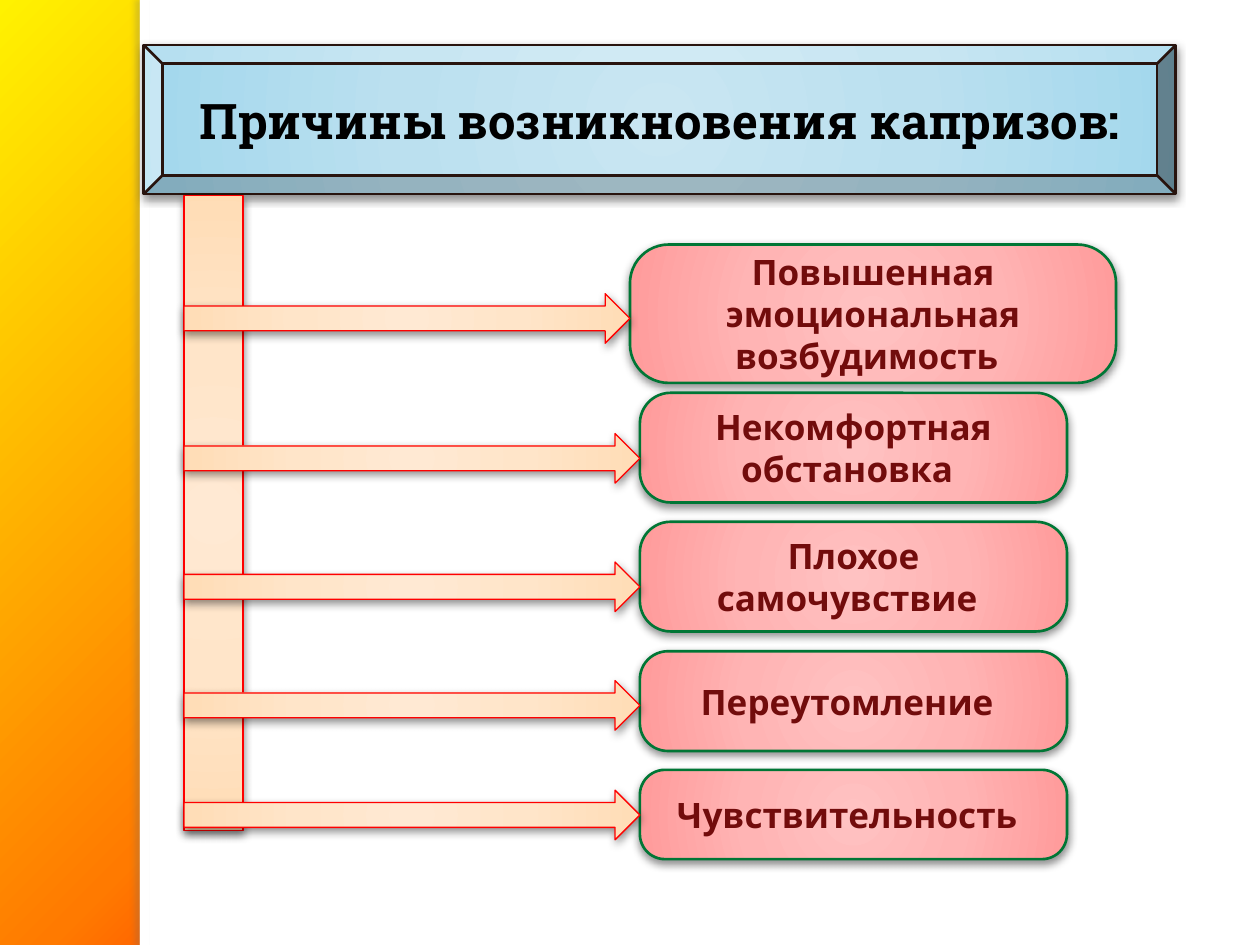
from dataclasses import dataclass

from lxml.etree import SubElement
from pptx import Presentation
from pptx.dml.color import RGBColor
from pptx.enum.shapes import MSO_SHAPE
from pptx.enum.text import MSO_ANCHOR, PP_ALIGN
from pptx.oxml.ns import qn
from pptx.util import Cm, Pt

COLORS = {
    "panel": "FFFFFF",
    "edge_shadow": "736F63",
    "shadow": "000000",
    "banner_line": "28140E",
    "banner_text": "000000",
    "cause_line": "007635",
    "cause_text": "720C0C",
    "arrow_line": "FF0000",
}
GRADIENTS = {
    "background": [(0, "FFF200", 100), (45, "FF7A00", 100), (70, "FF0300", 56), (100, "4D0808", 75)],
    "banner": [(0, "C9E6F2", 100), (50, "BBE0EF", 100), (97, "A4D8ED", 100), (100, "9BD7EE", 100)],
    "cause": [(0, "FFC2C2", 100), (50, "FFB4B4", 100), (97, "FF9C9C", 100), (100, "FF9595", 100)],
    "arrow": [(0, "FFE9D3", 100), (50, "FFE5C9", 100), (97, "FFDDB7", 100), (100, "FFDBB2", 100)],
}
STEM_LEFT = 3.71
ARROW_HEIGHT = 1


@dataclass(frozen=True)
class Frame:
    left: float
    top: float
    width: float
    height: float

    def lengths(self) -> tuple:
        return Cm(self.left), Cm(self.top), Cm(self.width), Cm(self.height)


@dataclass(frozen=True)
class Style:
    gradient: str
    line: str
    line_width: float


@dataclass(frozen=True)
class Cause:
    text: str
    top: float
    height: float
    arrow_top: float
    left: float = 12.9
    width: float = 8.61


BANNER = Style("banner", "banner_line", 1.5)
CAUSE = Style("cause", "cause_line", 1.5)
ARROW = Style("arrow", "arrow_line", 0.75)

BANNER_FRAME = Frame(2.9, 0.91, 20.8, 3)
CAUSES = [
    Cause("Повышенная эмоциональная возбудимость ", 4.93, 2.79, 5.92, 12.7, 9.8),
    Cause("Некомфортная обстановка ", 7.92, 2.21, 8.74),
    Cause("Плохое самочувствие ", 10.52, 2.21, 11.33),
    Cause("Переутомление ", 13.13, 2.01, 13.72),
    Cause("Чувствительность ", 15.52, 1.8, 15.93),
]


def add_color(parent, color: str, opacity: int):
    node = SubElement(parent, qn("a:srgbClr"), val=color)
    if opacity < 100:
        SubElement(node, qn("a:alpha"), val=str(opacity * 1000))


def paint_gradient(fill, properties, name: str, angle: int | None = None):
    fill.solid()
    solid = properties.find(qn("a:solidFill"))
    gradient = properties.makeelement(qn("a:gradFill"), {"rotWithShape": "1"})
    stops = SubElement(gradient, qn("a:gsLst"))
    for position, color, opacity in GRADIENTS[name]:
        add_color(SubElement(stops, qn("a:gs"), pos=str(position * 1000)), color, opacity)
    if angle is None:
        circle = SubElement(gradient, qn("a:path"), {"path": "circle"})
        SubElement(circle, qn("a:fillToRect"), l="50000", t="50000", r="50000", b="50000")
    else:
        SubElement(gradient, qn("a:lin"), ang=str(angle * 60000), scaled="0")
    properties.replace(solid, gradient)


def add_shadow(shape, color: str, opacity: int, blur: int, distance: int, angle: int):
    shape.shadow.inherit = False
    effects = shape.element.spPr.find(qn("a:effectLst"))
    outer = SubElement(effects, qn("a:outerShdw"), blurRad=str(Pt(blur)), dist=str(Pt(distance)),
                       dir=str(angle * 60000), rotWithShape="0")
    add_color(outer, COLORS[color], opacity)


def add_panel(page, frame: Frame):
    panel = page.shapes.add_shape(MSO_SHAPE.RECTANGLE, *frame.lengths())
    panel.fill.solid()
    panel.fill.fore_color.rgb = RGBColor.from_string(COLORS["panel"])
    panel.line.fill.background()
    panel.shadow.inherit = False
    return panel


def add_styled(page, kind: MSO_SHAPE, frame: Frame, style: Style):
    shape = page.shapes.add_shape(kind, *frame.lengths())
    paint_gradient(shape.fill, shape.element.spPr, style.gradient)
    shape.line.color.rgb = RGBColor.from_string(COLORS[style.line])
    shape.line.width = Pt(style.line_width)
    add_shadow(shape, "shadow", 43, 5, 2, 90)
    return shape


def write(shape, text: str, font: str, size: int, color: str):
    frame = shape.text_frame
    frame.text = text
    frame.word_wrap = True
    frame.vertical_anchor = MSO_ANCHOR.MIDDLE
    paragraph = frame.paragraphs[0]
    paragraph.alignment = PP_ALIGN.CENTER
    for span in paragraph.runs:
        span.font.name = font
        span.font.size = Pt(size)
        span.font.bold = True
        span.font.color.rgb = RGBColor.from_string(COLORS[color])


def add_title(page):
    add_styled(page, MSO_SHAPE.BEVEL, BANNER_FRAME, BANNER)
    title = page.shapes.title
    title.left, title.top, title.width, title.height = BANNER_FRAME.lengths()
    write(title, "Причины возникновения капризов:", "Roboto Slab", 28, "banner_text")
    page.shapes.element.append(title.element)


def add_cause(page, cause: Cause):
    frame = Frame(cause.left, cause.top, cause.width, cause.height)
    box = add_styled(page, MSO_SHAPE.ROUNDED_RECTANGLE, frame, CAUSE)
    box.adjustments[0] = 0.28
    write(box, cause.text, "Comic Neue", 20, "cause_text")


def add_arrow(page, cause: Cause):
    frame = Frame(STEM_LEFT, cause.arrow_top, cause.left - STEM_LEFT, ARROW_HEIGHT)
    add_styled(page, MSO_SHAPE.RIGHT_ARROW, frame, ARROW)


def main():
    deck = Presentation()
    deck.slide_width, deck.slide_height = Cm(25.4), Cm(19.05)
    page = deck.slides.add_slide(deck.slide_layouts[5])

    background = page.background.fill
    background.solid()
    paint_gradient(background, page.element.xpath(".//p:bgPr")[0], "background", 45)

    add_panel(page, Frame(2.82, 0, 22.58, 19.05))
    edge = add_panel(page, Frame(2.82, 0, 0.2, 19.05))
    add_shadow(edge, "edge_shadow", 25, 3, 3, 180)

    add_title(page)
    for cause in CAUSES:
        add_cause(page, cause)
    add_styled(page, MSO_SHAPE.RECTANGLE, Frame(STEM_LEFT, 3.94, 1.19, 12.8), ARROW)
    for cause in CAUSES:
        add_arrow(page, cause)

    deck.save("out.pptx")


if __name__ == "__main__":
    main()
